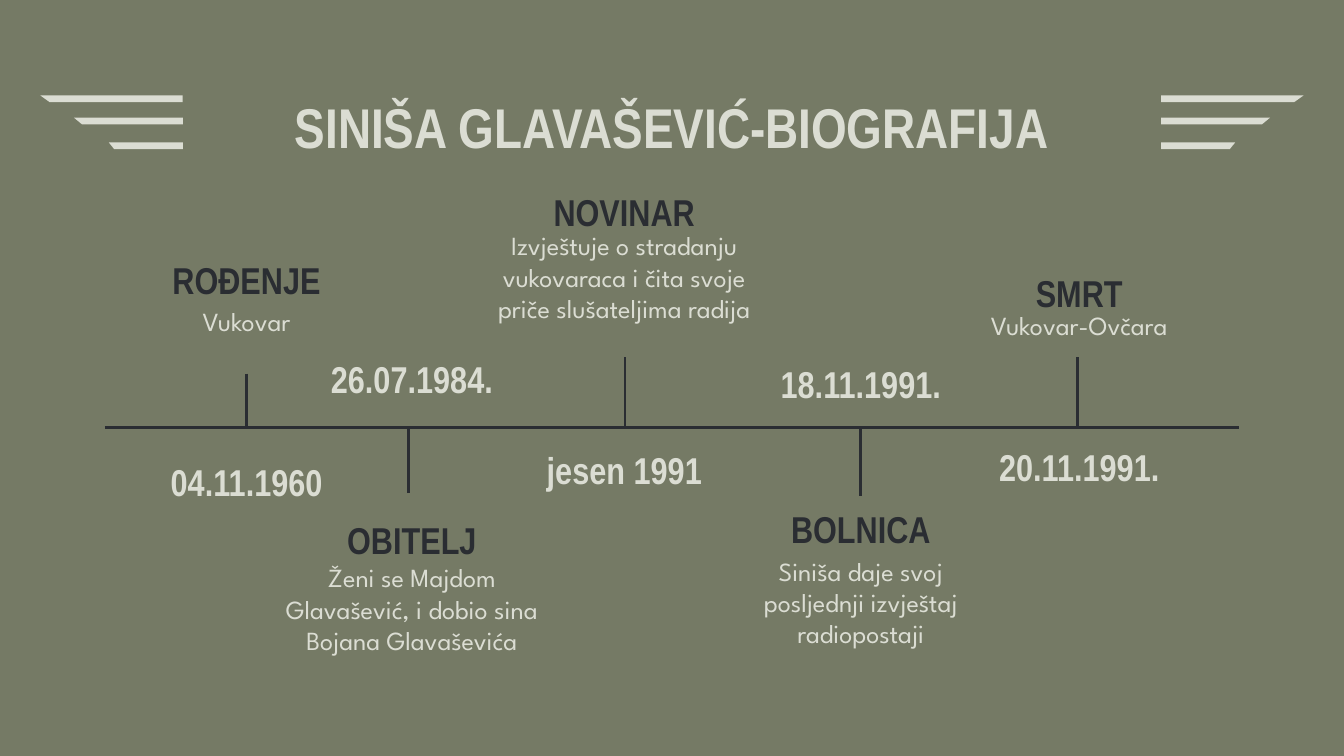
import pptx
import pptx.dml.color
import pptx.enum.shapes
import pptx.enum.text
import pptx.oxml.ns
import pptx.util
import lxml.etree

DARK, LIGHT, OLIVE = "2A2D32", "DBDDD3", "757A65"
HEAD, BODY = "Arial Narrow", "League Spartan"
TOP = pptx.enum.text.MSO_ANCHOR.TOP
MIDDLE = pptx.enum.text.MSO_ANCHOR.MIDDLE
BOTTOM = pptx.enum.text.MSO_ANCHOR.BOTTOM
rgb = pptx.dml.color.RGBColor.from_string

prs = pptx.Presentation()
prs.slide_width = pptx.util.Inches(10)
prs.slide_height = pptx.util.Inches(5.625)
U = prs.slide_width // 100  # square grid: 100 columns, 56.25 rows
s = prs.slides.add_slide(prs.slide_layouts[6])
s.background.fill.solid()
s.background.fill.fore_color.rgb = rgb(OLIVE)


def add_text(text, x, y, w, h, font, size, color, anchor):
    tf = s.shapes.add_textbox(*(round(v * U) for v in (x, y, w, h))).text_frame
    tf.word_wrap = True
    tf.vertical_anchor = anchor
    tf.margin_left = tf.margin_right = tf.margin_top = tf.margin_bottom = U
    p = tf.paragraphs[0]
    p.text = text
    p.alignment = pptx.enum.text.PP_ALIGN.CENTER
    p.font.name, p.font.size = font, pptx.util.Pt(size)
    p.font.bold = font == HEAD
    p.font.color.rgb = rgb(color)


def add_line(x1, y1, x2, y2):
    ends = (round(v * U) for v in (x1, y1, x2, y2))
    sp = s.shapes.add_connector(pptx.enum.shapes.MSO_CONNECTOR.STRAIGHT, *ends)
    sp.line.color.rgb = rgb(DARK)
    sp.line.width = pptx.util.Pt(1.5)
    lxml.etree.SubElement(sp._element.spPr, pptx.oxml.ns.qn("a:effectLst"))


# Title
add_text("SINIŠA GLAVAŠEVIĆ-BIOGRAFIJA", 7.8, 5.9, 84.4, 6.4, HEAD, 30, LIGHT, TOP)

# Stripes on both sides, mirrored about the middle: top, long edge, short edge
for top, long_x, short_x in [(7.1, 3, 3.7), (8.75, 5.5, 6.1), (10.6, 8.1, 8.5)]:
    outline = [(13.6, top), (long_x, top), (short_x, top + 0.5), (13.6, top + 0.5)]
    for mirror in (False, True):
        pts = [(round((100 - x if mirror else x) * U), round(y * U)) for x, y in outline]
        fb = s.shapes.build_freeform(*pts[0])
        fb.add_line_segments(pts[1:], close=True)
        sp = fb.convert_to_shape()
        sp.shadow.inherit = False
        sp.fill.solid()
        sp.fill.fore_color.rgb = rgb(LIGHT)
        sp.line.fill.background()

# Time axis
AXIS = 31.8
add_line(7.8, AXIS, 92.2, AXIS)

# Events: heading, detail, date, centre column, tick column and tick end,
# rows of heading, detail and date, width of detail
events = [
    ("ROĐENJE", "Vukovar", "04.11.1960",
     18.35, 18.35, 27.8, 17.6, 21.7, 31.8, 21.1),
    ("OBITELJ", "Ženi se Majdom Glavašević, i dobio sina Bojana Glavaševića", "26.07.1984.",
     30.65, 30.4, 36.7, 36.9, 40.8, 24.1, 22.8),
    ("NOVINAR", "Izvještuje o stradanju vukovaraca i čita svoje priče slušateljima radija",
     "jesen 1991", 46.45, 46.5, 26.6, 12.5, 16.1, 30.9, 21.1),
    ("BOLNICA", "Siniša daje svoj posljednji izvještaj radiopostaji", "18.11.1991.",
     64.05, 64, 36.9, 36.1, 40.3, 24.5, 21.1),
    ("SMRT", "Vukovar-Ovčara", "20.11.1991.",
     80.3, 80.2, 26.6, 18.5, 22, 30.7, 21.1),
]
for heading, detail, date, mid, tick, tick_end, head_y, detail_y, date_y, w in events:
    left = mid - 21.1 / 2
    add_line(tick, tick_end, tick, AXIS)
    add_text(detail, mid - w / 2, detail_y, w, 6.1, BODY, 14, LIGHT, TOP)
    add_text(heading, left, head_y, 21.1, 5.9, HEAD, 20, DARK, BOTTOM)
    add_text(date, left, date_y, 21.1, 8.1, HEAD, 20, LIGHT, MIDDLE)

prs.save("out.pptx")
